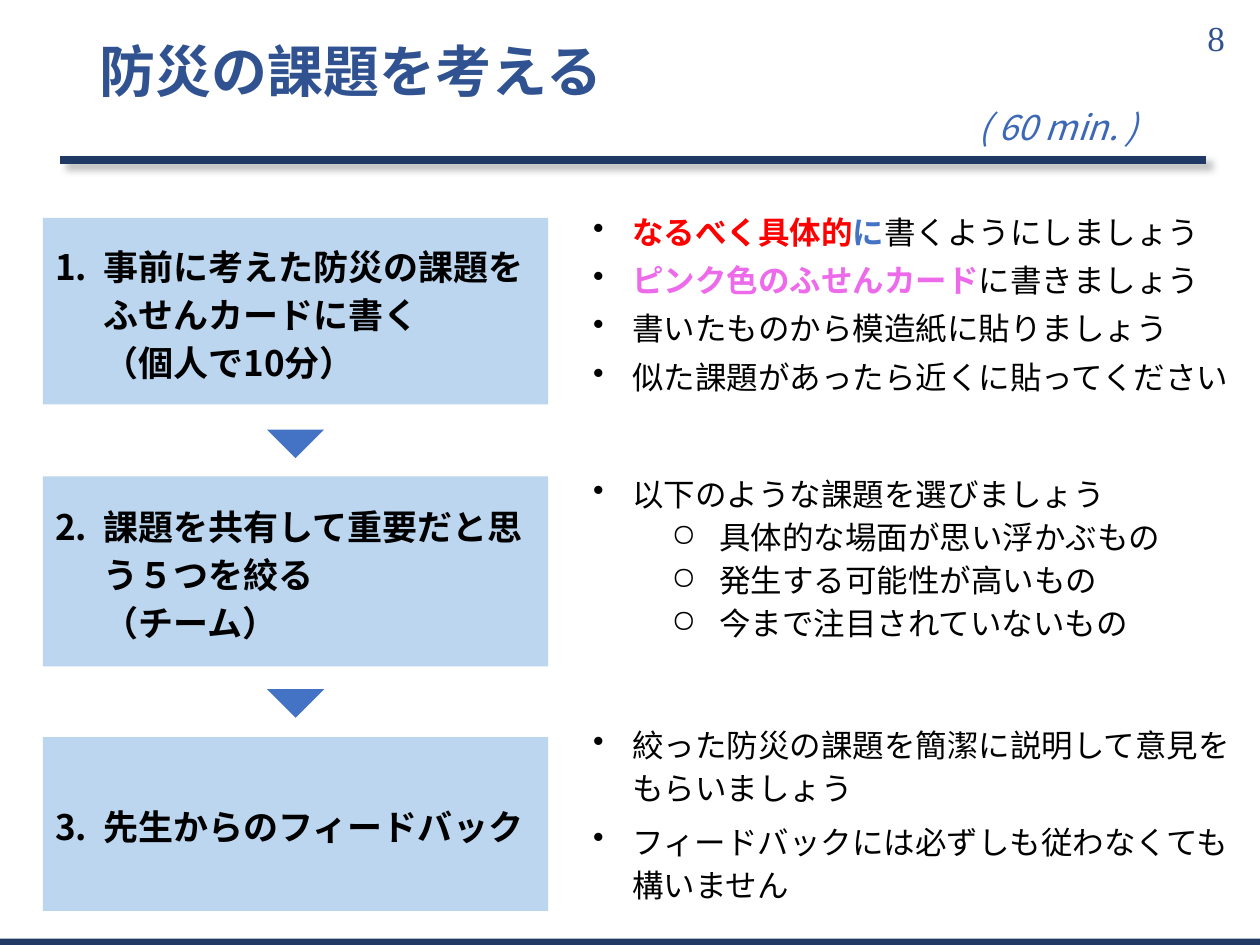
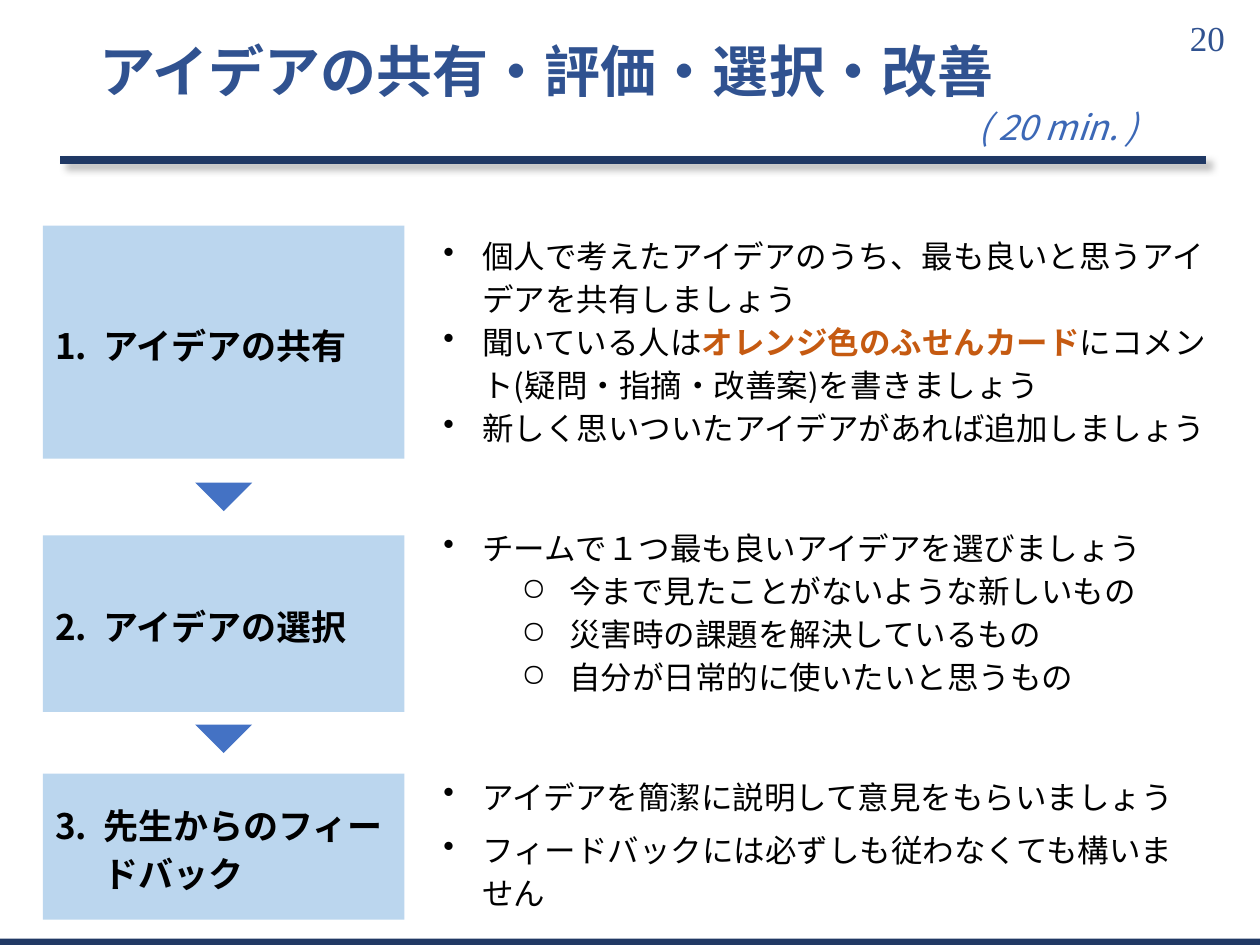
from dataclasses import dataclass
from lxml.etree import SubElement
from pptx import Presentation
from pptx.dml.color import RGBColor
from pptx.enum.shapes import MSO_CONNECTOR, MSO_SHAPE
from pptx.enum.text import MSO_ANCHOR, PP_ALIGN
from pptx.oxml.ns import qn
from pptx.util import Inches, Pt


@dataclass(frozen=True)
class Theme:
    font: str = "Noto Sans CJK JP"
    serif: str = "Times New Roman"
    title: int = 32
    label: int = 20
    body: int = 18
    ink: str = "000000"
    head: str = "305290"
    time: str = "3C68B6"
    rule: str = "1F3864"
    foot: str = "213964"
    card: str = "BBD6EE"
    arrow: str = "4472C4"
    red: str = "FF0000"
    pink: str = "ED6BEB"
    orange: str = "C55A11"


@dataclass
class Step:
    label: str
    card: tuple
    box: tuple
    notes: list
    lead: float = 1.14
    gap: int = 6


T = Theme()


def rgb(code):
    return RGBColor.from_string(code)


def style(para, size, color, name=T.font, bold=False, italic=False):
    font = para.font
    font.size, font.name = Pt(size), name
    font.bold, font.italic = bold, italic
    font.color.rgb = rgb(color)
    props = para._p.pPr.find(qn("a:defRPr"))
    SubElement(props, qn("a:ea")).set("typeface", name)


def bullet(para, left, hang, kind, **attrs):
    props = para._p.get_or_add_pPr()
    props.set("marL", str(Inches(left)))
    props.set("indent", str(-Inches(hang)))
    tint = SubElement(props, qn("a:buClr"))
    SubElement(tint, qn("a:srgbClr")).set("val", T.ink)
    mark = SubElement(props, qn(kind))
    for key, val in attrs.items():
        mark.set(key, str(val))


def frame(slide, box):
    text = slide.shapes.add_textbox(*map(Inches, box)).text_frame
    text.word_wrap = True
    return text


def shape(slide, kind, box, fill):
    item = slide.shapes.add_shape(kind, *map(Inches, box))
    item.shadow.inherit = False
    item.fill.solid()
    item.fill.fore_color.rgb = rgb(fill)
    item.line.fill.background()
    return item


def rule(slide, left, right, top):
    line = slide.shapes.add_connector(
        MSO_CONNECTOR.STRAIGHT, Inches(left), Inches(top), Inches(right), Inches(top))
    line.line.color.rgb = rgb(T.rule)
    line.line.width = Pt(5)
    effect = SubElement(line._element.spPr, qn("a:effectLst"))
    shade = SubElement(effect, qn("a:outerShdw"), blurRad=str(Pt(4)),
                       dist=str(Pt(4)), dir=str(45 * 60000), algn="tl", rotWithShape="0")
    color = SubElement(shade, qn("a:srgbClr"), val="000000")
    SubElement(color, qn("a:alpha"), val="25000")


def header(slide, title, time, number):
    head = slide.shapes.title
    head.left, head.top, head.width, head.height = map(Inches, (0.69, 0.19, 8.62, 0.8))
    text = head.text_frame
    text.text = title
    text.vertical_anchor = MSO_ANCHOR.MIDDLE
    text.margin_top = text.margin_bottom = 0
    para = text.paragraphs[0]
    para.alignment, para.line_spacing = PP_ALIGN.LEFT, 0.9
    style(para, T.title, T.head, bold=True)

    para = frame(slide, (0.87, 0.83, 8.26, 0.44)).paragraphs[0]
    para.text = time
    para.alignment, para.line_spacing = PP_ALIGN.RIGHT, 0.9
    style(para, T.label, T.time, italic=True)

    text = frame(slide, (9.21, 0.1, 0.61, 0.4))
    text.vertical_anchor = MSO_ANCHOR.MIDDLE
    para = text.paragraphs[0]
    para.text = number
    para.alignment = PP_ALIGN.RIGHT
    style(para, T.label, T.head, T.serif)
    rule(slide, 0.48, 9.57, 1.27)


def footer(slide):
    shape(slide, MSO_SHAPE.RECTANGLE, (0, 7.45, 10, 0.1), T.foot)


def card(slide, box, label, number):
    text = shape(slide, MSO_SHAPE.RECTANGLE, box, T.card).text_frame
    text.word_wrap = True
    text.vertical_anchor = MSO_ANCHOR.MIDDLE
    para = text.paragraphs[0]
    para.text = label
    bullet(para, 0.38, 0.38, "a:buAutoNum", type="arabicPeriod", startAt=number)
    para.alignment, para.line_spacing = PP_ALIGN.LEFT, 1.14
    style(para, T.label, T.ink, bold=True)


def arrow(slide, mid, top, side=0.32):
    item = shape(slide, MSO_SHAPE.RIGHT_TRIANGLE, (mid - side / 2, top, side, side), T.arrow)
    item.rotation = 315


def notes(slide, step):
    text = frame(slide, step.box)
    for i, (level, *runs) in enumerate(step.notes):
        para = text.paragraphs[0] if i == 0 else text.add_paragraph()
        para.level = level
        if level:
            bullet(para, 1, 0.38, "a:buChar", char="○")
        else:
            bullet(para, 0.31, 0.31, "a:buChar", char="•")
        para.line_spacing = step.lead
        para.space_before = Pt(step.gap if i and not level else 0)
        style(para, T.body, T.ink)
        for part in runs:
            words, color = part if isinstance(part, tuple) else (part, None)
            run = para.add_run()
            run.text = words
            if color:
                run.font.bold = True
                run.font.color.rgb = rgb(color)


def build(deck, title, time, number, steps, tips):
    slide = deck.slides.add_slide(deck.slide_layouts[5])
    header(slide, title, time, number)
    footer(slide)
    for i, step in enumerate(steps, 1):
        card(slide, step.card, step.label, i)
        notes(slide, step)
    left, _, width, _ = steps[0].card
    for top in tips:
        arrow(slide, left + width / 2, top)


ISSUES = [
    Step("事前に考えた防災の課題をふせんカードに書く\v（個人で10分）",
         (0.34, 1.73, 4.01, 1.48), (4.61, 1.64, 5.27, 1.68),
         [(0, ("なるべく具体的", T.red), ("に", T.arrow), "書くようにしましょう"),
          (0, ("ピンク色のふせんカード", T.pink), "に書きましょう"),
          (0, "書いたものから模造紙に貼りましょう"),
          (0, "似た課題があったら近くに貼ってください")], lead=1.0),
    Step("課題を共有して重要だと思う５つを絞る\v（チーム）",
         (0.34, 3.78, 4.01, 1.51), (4.61, 3.68, 4.71, 1.65),
         [(0, "以下のような課題を選びましょう"),
          (1, "具体的な場面が思い浮かぶもの"),
          (1, "発生する可能性が高いもの"),
          (1, "今まで注目されていないもの")]),
    Step("先生からのフィードバック",
         (0.34, 5.85, 4.01, 1.38), (4.61, 5.67, 5.27, 1.65),
         [(0, "絞った防災の課題を簡潔に説明して意見をもらいましょう"),
          (0, "フィードバックには必ずしも従わなくても構いません")]),
]

IDEAS = [
    Step("アイデアの共有",
         (0.34, 1.79, 2.87, 1.85), (3.42, 1.79, 6.45, 2.03),
         [(0, "個人で考えたアイデアのうち、最も良いと思うアイデアを共有しましょう"),
          (0, "聞いている人は", ("オレンジ色のふせんカード", T.orange),
           "にコメント(疑問・指摘・改善案)を書きましょう"),
          (0, "新しく思いついたアイデアがあれば追加しましょう")], gap=0),
    Step("アイデアの選択",
         (0.34, 4.25, 2.87, 1.4), (3.42, 4.11, 6.45, 1.72),
         [(0, "チームで１つ最も良いアイデアを選びましょう"),
          (1, "今まで見たことがないような新しいもの"),
          (1, "災害時の課題を解決しているもの"),
          (1, "自分が日常的に使いたいと思うもの")]),
    Step("先生からのフィードバック",
         (0.34, 6.14, 2.87, 1.16), (3.42, 6.08, 6.19, 1.29),
         [(0, "アイデアを簡潔に説明して意見をもらいましょう"),
          (0, "フィードバックには必ずしも従わなくても構いません")]),
]


def main():
    deck = Presentation()
    deck.slide_width, deck.slide_height = Inches(10), Inches(7.5)
    build(deck, "防災の課題を考える", "( 60 min. )", "8", ISSUES, (3.25, 5.31))
    build(deck, "アイデアの共有・評価・選択・改善", "( 20 min. )", "20", IDEAS, (3.67, 5.59))
    deck.save("out.pptx")


if __name__ == "__main__":
    main()
